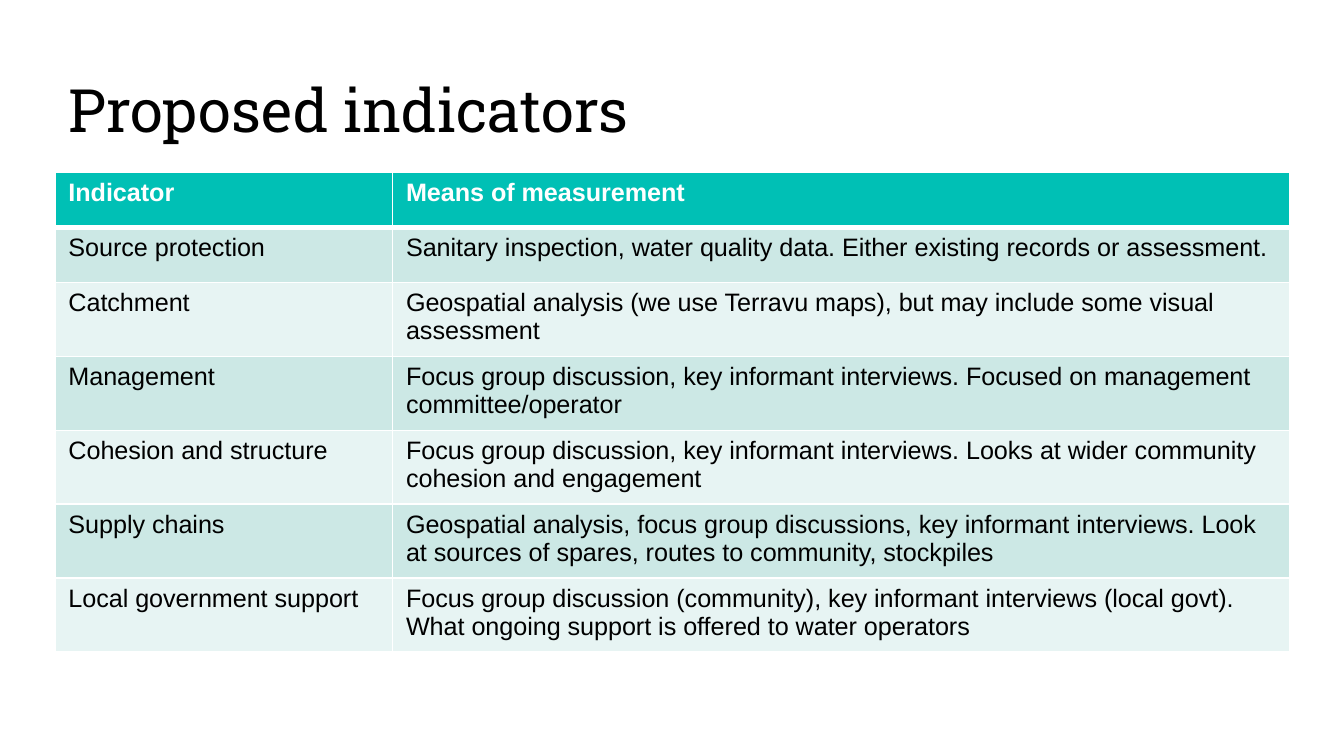
from lxml import etree
from pptx import Presentation
from pptx import util as u
from pptx.dml import color
from pptx.enum import text
from pptx.oxml import ns

TITLE = "Proposed indicators"
ROWS = [
    ("Indicator", "Means of measurement"),
    ("Source protection",
     "Sanitary inspection, water quality data. Either existing records or assessment."),
    ("Catchment",
     "Geospatial analysis (we use Terravu maps), but may include some visual assessment"),
    ("Management",
     "Focus group discussion, key informant interviews. Focused on management committee/operator"),
    ("Cohesion and structure",
     "Focus group discussion, key informant interviews. Looks at wider community cohesion and engagement"),
    ("Supply chains",
     "Geospatial analysis, focus group discussions, key informant interviews. "
     "Look at sources of spares, routes to community, stockpiles"),
    ("Local government support",
     "Focus group discussion (community), key informant interviews (local govt). "
     "What ongoing support is offered to water operators"),
]
COLORS = {"header": "00C0B5", "odd": "CCE8E5", "even": "E7F4F3",
          "white": "FFFFFF", "black": "000000"}
LEFT = 1.04
COLUMN_WIDTHS = (6.38, 16.95)
ROW_HEIGHT = 1.04


def rgb(name):
    return color.RGBColor.from_string(COLORS[name])


def style_font(paragraph, name, size, color_name, bold=False):
    font = paragraph.font
    font.name, font.size, font.bold = name, u.Pt(size), bold
    font.color.rgb = rgb(color_name)


def add_border(properties, side, width, position):
    line = etree.Element(ns.qn(f"a:{side}"), w=str(u.Pt(width)))
    fill = etree.SubElement(line, ns.qn("a:solidFill"))
    etree.SubElement(fill, ns.qn("a:srgbClr"), val=COLORS["white"])
    properties.insert(position, line)


def add_title(slide):
    box = slide.shapes.add_textbox(u.Cm(LEFT), u.Cm(0.76), u.Cm(sum(COLUMN_WIDTHS)), u.Cm(2.77))
    frame = box.text_frame
    frame.word_wrap = True
    frame.vertical_anchor = text.MSO_ANCHOR.MIDDLE
    frame.text = TITLE
    paragraph = frame.paragraphs[0]
    paragraph.line_spacing = 0.9
    style_font(paragraph, "Roboto Slab", 32, "black")


def add_indicator_table(slide):
    table = slide.shapes.add_table(
        len(ROWS), len(COLUMN_WIDTHS), u.Cm(LEFT), u.Cm(3.26),
        u.Cm(sum(COLUMN_WIDTHS)), u.Cm(ROW_HEIGHT * len(ROWS))).table
    for column, width in zip(table.columns, COLUMN_WIDTHS):
        column.width = u.Cm(width)
    for row_index, row in enumerate(ROWS):
        is_header = row_index == 0
        band = "header" if is_header else "odd" if row_index % 2 else "even"
        for column_index, content in enumerate(row):
            cell = table.cell(row_index, column_index)
            cell.text_frame.text = content
            style_font(cell.text_frame.paragraphs[0], "Arial", 13.5,
                       "white" if is_header else "black", is_header)
            cell.fill.solid()
            cell.fill.fore_color.rgb = rgb(band)
            widths = {"lnL": 1, "lnR": 1, "lnT": 3 if row_index == 1 else 1,
                      "lnB": 3 if is_header else 1}
            for position, (side, width) in enumerate(widths.items()):
                add_border(cell._tc.get_or_add_tcPr(), side, width, position)


def main():
    presentation = Presentation()
    presentation.slide_width, presentation.slide_height = u.Cm(25.4), u.Cm(14.29)
    slide = presentation.slides.add_slide(presentation.slide_layouts[6])
    add_title(slide)
    add_indicator_table(slide)
    presentation.save("out.pptx")


if __name__ == "__main__":
    main()
